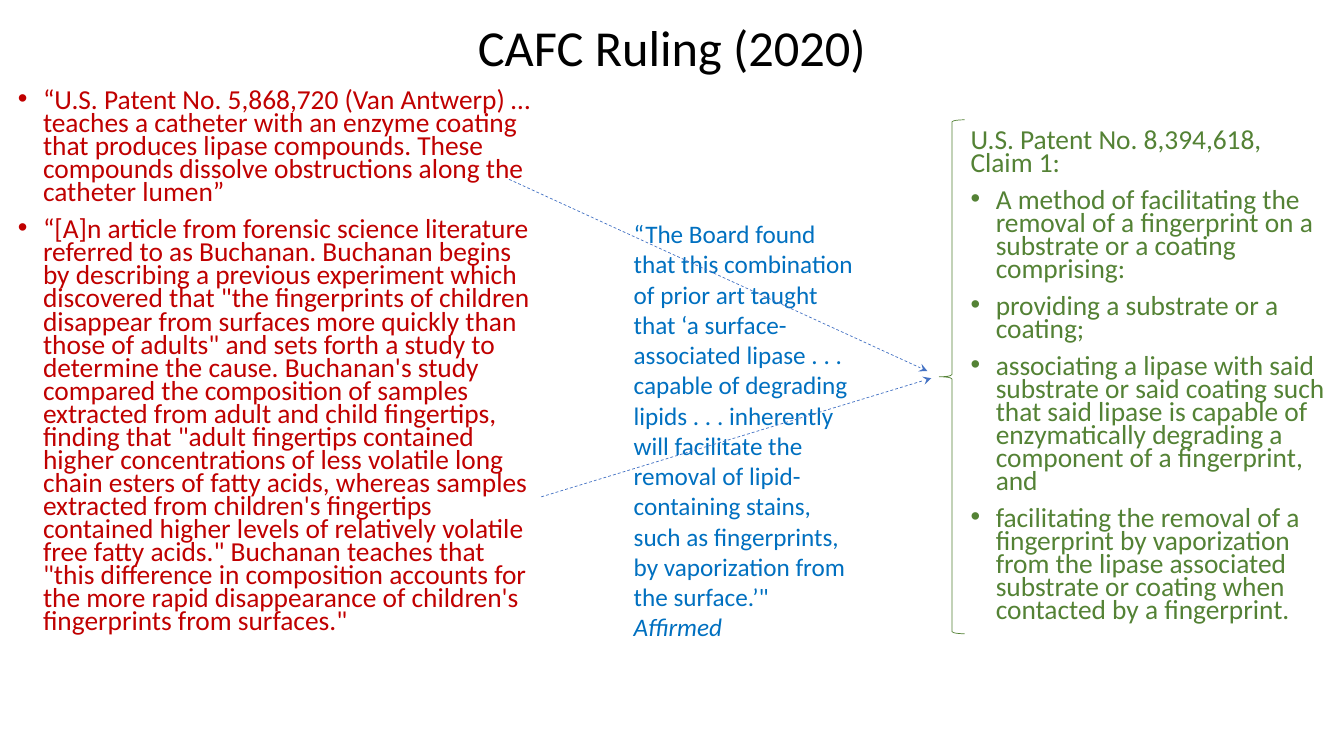
from lxml.etree import SubElement
from pptx import Presentation
from pptx.dml.color import RGBColor
from pptx.enum.dml import MSO_LINE
from pptx.enum.shapes import MSO_CONNECTOR, MSO_SHAPE
from pptx.enum.text import MSO_ANCHOR, PP_ALIGN
from pptx.oxml.ns import qn
from pptx.util import Cm, Pt

COLORS = {
    "title": "000000",
    "prior_art": "C00000",
    "claim": "548235",
    "board": "0070C0",
    "arrow": "4472C4",
}
FONT = "Calibri"
INDENT = Cm(0.635)

PRIOR_ART = [
    "“U.S. Patent No. 5,868,720 (Van Antwerp) … teaches a catheter with an enzyme "
    "coating that produces lipase compounds. These compounds dissolve obstructions "
    "along the catheter lumen”",
    "“[A]n article from forensic science literature referred to as Buchanan. Buchanan "
    "begins by describing a previous experiment which discovered that \"the fingerprints "
    "of children disappear from surfaces more quickly than those of adults\" and sets "
    "forth a study to determine the cause. Buchanan's study compared the composition of "
    "samples extracted from adult and child fingertips, finding that \"adult fingertips "
    "contained higher concentrations of less volatile long chain esters of fatty acids, "
    "whereas samples extracted from children's fingertips contained higher levels of "
    "relatively volatile free fatty acids.\" Buchanan teaches that \"this difference in "
    "composition accounts for the more rapid disappearance of children's fingerprints "
    "from surfaces.\"",
]
CLAIM_HEADING = "U.S. Patent No. 8,394,618, Claim 1:"
CLAIM_STEPS = [
    "A method of facilitating the removal of a fingerprint on a substrate or a coating "
    "comprising:",
    "providing a substrate or a coating;",
    "associating a lipase with said substrate or said coating such that said lipase is "
    "capable of enzymatically degrading a component of a fingerprint, and",
    "facilitating the removal of a fingerprint by vaporization from the lipase associated "
    "substrate or coating when contacted by a fingerprint.",
]
BOARD_FINDING = (
    "“The Board found that this combination of prior art taught that ‘a "
    "surface-associated lipase . . . capable of degrading lipids . . . inherently will "
    "facilitate the removal of lipid-containing stains, such as fingerprints, by "
    "vaporization from the surface.’\""
)


def rgb(name):
    return RGBColor.from_string(COLORS[name])


def add_box(s, left, top, width, height, anchor=MSO_ANCHOR.TOP):
    tf = s.shapes.add_textbox(Cm(left), Cm(top), Cm(width), Cm(height)).text_frame
    tf.word_wrap = True
    tf.vertical_anchor = anchor
    return tf


def add_text(tf, text, *, size, color, spacing=1.0, before=0, bullet=False,
             italic=False, align=PP_ALIGN.LEFT):
    first = not tf.text
    p = tf.paragraphs[0] if first else tf.add_paragraph()
    p.alignment = align
    p.line_spacing = spacing
    p.space_before = Pt(0 if first else before)
    if bullet:
        pPr = p._p.get_or_add_pPr()
        pPr.set("marL", str(INDENT))
        pPr.set("indent", str(-INDENT))
        SubElement(pPr, qn("a:buFont"), typeface="Arial")
        SubElement(pPr, qn("a:buChar"), char="•")
    r = p.add_run()
    r.text = text
    r.font.name = FONT
    r.font.size = Pt(size)
    r.font.italic = italic
    r.font.color.rgb = rgb(color)


def add_brace(s, left, top, width, height, color):
    sp = s.shapes.add_shape(MSO_SHAPE.LEFT_BRACE, Cm(left), Cm(top), Cm(width), Cm(height))
    sp.shadow.inherit = False
    sp.fill.background()
    sp.line.color.rgb = rgb(color)
    sp.line.width = Pt(0.5)


def add_dashed_arrow(s, x1, y1, x2, y2):
    line = s.shapes.add_connector(MSO_CONNECTOR.STRAIGHT, Cm(x1), Cm(y1), Cm(x2), Cm(y2))
    line.line.color.rgb = rgb("arrow")
    line.line.width = Pt(0.5)
    line.line.dash_style = MSO_LINE.DASH
    SubElement(line.line._get_or_add_ln(), qn("a:tailEnd"), type="stealth")
    SubElement(line._element.spPr, qn("a:effectLst"))


def main():
    prs = Presentation()
    prs.slide_width, prs.slide_height = Cm(33.87), Cm(19.05)
    s = prs.slides.add_slide(prs.slide_layouts[6])

    # Title
    tf = add_box(s, 2.33, 0.28, 29.21, 1.98, MSO_ANCHOR.MIDDLE)
    add_text(tf, "CAFC Ruling (2020)", size=36, color="title", spacing=0.9,
             align=PP_ALIGN.CENTER)

    # Prior art on the left
    dense = {"size": 19.6, "spacing": 0.7, "before": 10}
    tf = add_box(s, 0.2, 2.18, 13.44, 16.71)
    for text in PRIOR_ART:
        add_text(tf, text, color="prior_art", bullet=True, **dense)

    # Patent claim on the right
    tf = add_box(s, 24.21, 3.18, 9.47, 14.68)
    add_text(tf, CLAIM_HEADING, color="claim", **dense)
    for text in CLAIM_STEPS:
        add_text(tf, text, color="claim", bullet=True, **dense)

    # Board finding in the middle
    tf = add_box(s, 15.72, 5.38, 6.25, 11.02)
    add_text(tf, BOARD_FINDING, size=18, color="board")
    add_text(tf, "Affirmed", size=18, color="board", italic=True)

    # Brace around the claim, with arrows from both references
    add_brace(s, 23.67, 3.02, 0.64, 12.95, "claim")
    add_dashed_arrow(s, 13.64, 12.52, 23.47, 9.53)
    add_dashed_arrow(s, 12.83, 4.52, 23.37, 9.35)

    prs.save("out.pptx")


if __name__ == "__main__":
    main()
